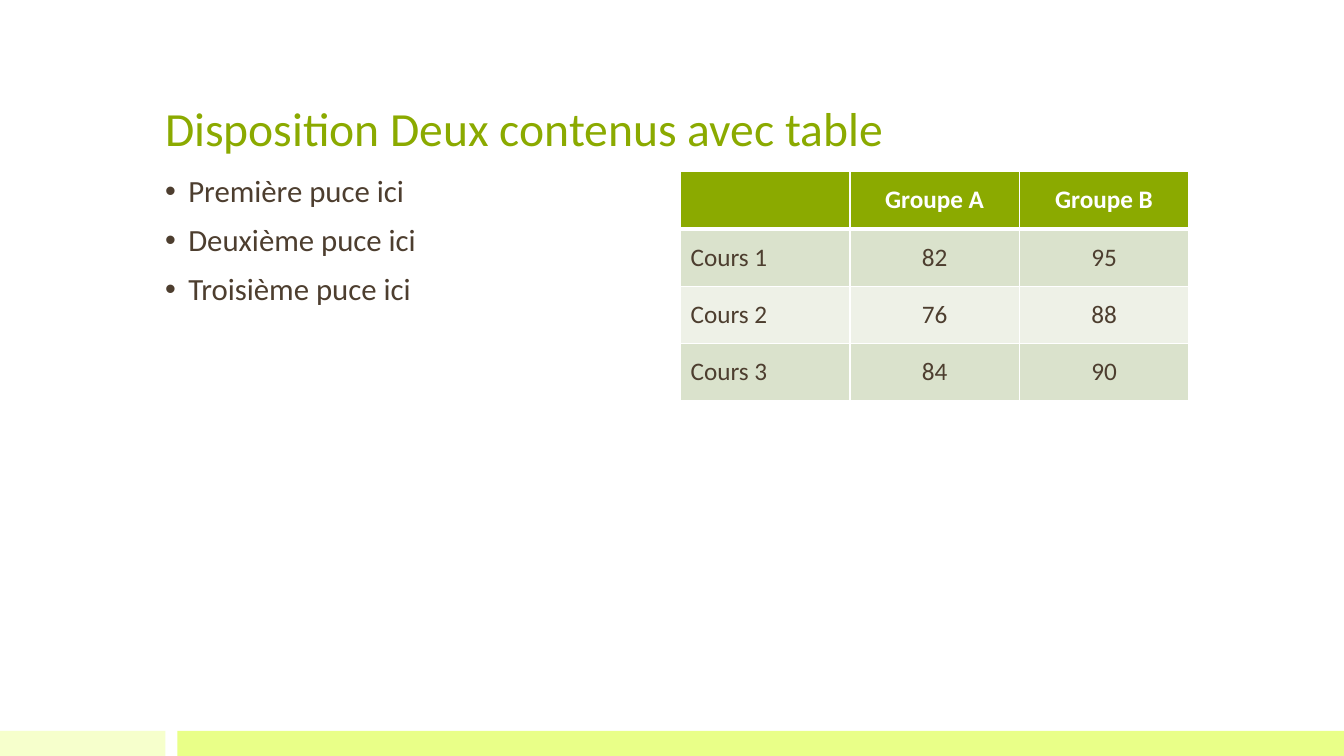
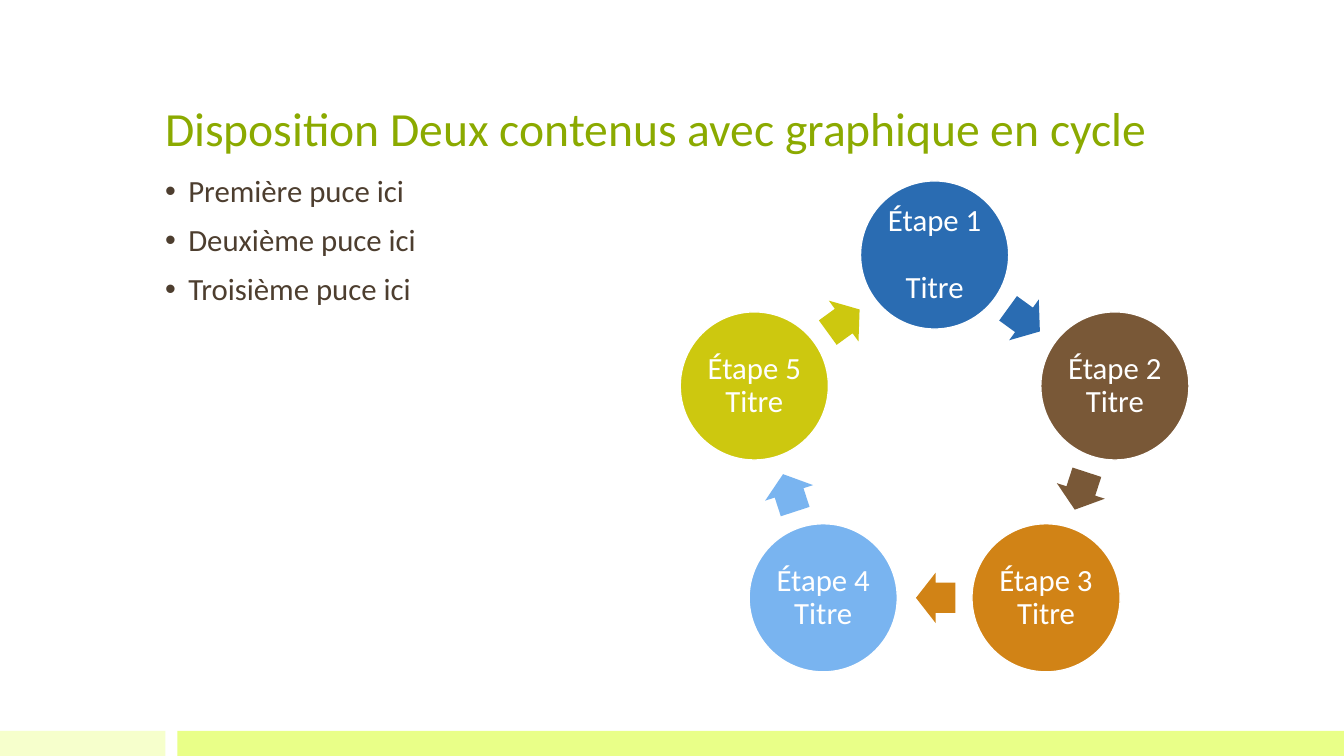
from copy import deepcopy
from math import cos, sin, radians

from lxml.etree import SubElement
from pptx import Presentation
from pptx.dml.color import RGBColor
from pptx.enum.shapes import MSO_SHAPE
from pptx.enum.text import MSO_ANCHOR, PP_ALIGN
from pptx.oxml.ns import qn
from pptx.util import Inches, Pt

# Shared style, in inches and points
COLORS = {
    "title": "8BAA00", "text": "4D3E2F", "white": "FFFFFF",
    "band_pale": "F6FFCC", "band": "E9FF88",
    "row_dark": "DAE2CC", "row_light": "EEF1E7",
    "blue": "2A6CB2", "brown": "795837", "orange": "D18316",
    "sky": "79B4F0", "olive": "CDC80F",
}
FONT = "Calibri"
WIDTH, HEIGHT = 13.33, 7.5
LEFT, TOP = 1.54, 1.7
COLUMN, GUTTER = 5.04, 0.17
RIGHT = LEFT + COLUMN + GUTTER
BULLETS = ["Première puce ici", "Deuxième puce ici", "Troisième puce ici"]


def style_text(text_frame, size, color, bold=False, align=None, spacing=None):
    for paragraph in text_frame.paragraphs:
        paragraph.alignment = align
        paragraph.line_spacing = spacing
        for run in paragraph.runs:
            run.font.name, run.font.size, run.font.bold = FONT, Pt(size), bold
            run.font.color.rgb = RGBColor.from_string(COLORS[color])
        for line_break in paragraph._p.findall(qn("a:br")):
            line_break.append(deepcopy(paragraph.runs[0].font._element))


def add_filled(slide, kind, left, top, width, height, color):
    shape = slide.shapes.add_shape(
        kind, Inches(left), Inches(top), Inches(width), Inches(height))
    shape.shadow.inherit = False
    shape.fill.solid()
    shape.fill.fore_color.rgb = RGBColor.from_string(COLORS[color])
    shape.line.fill.background()
    return shape


presentation = Presentation()
presentation.slide_width, presentation.slide_height = Inches(WIDTH), Inches(HEIGHT)

# Both slides: bands, title and bullets
slides = []
for title in ["Disposition Deux contenus avec table",
              "Disposition Deux contenus avec graphique en cycle"]:
    slide = presentation.slides.add_slide(presentation.slide_layouts[6])
    slides.append(slide)
    for left, right, color in [(0, 1.64, "band_pale"), (1.76, WIDTH, "band")]:
        add_filled(slide, MSO_SHAPE.RECTANGLE, left, HEIGHT - 0.25,
                   right - left, 0.25, color)

    title_box = slide.shapes.add_textbox(
        Inches(LEFT), Inches(0.3), Inches(2 * COLUMN + GUTTER), Inches(1.29))
    title_frame = title_box.text_frame
    title_frame.word_wrap = True
    title_frame.vertical_anchor = MSO_ANCHOR.BOTTOM
    title_frame.margin_bottom = Inches(0.03)
    title_frame.text = title
    style_text(title_frame, 34, "title", spacing=0.9)

    bullet_box = slide.shapes.add_textbox(
        Inches(LEFT), Inches(TOP), Inches(COLUMN), Inches(5.05))
    bullet_frame = bullet_box.text_frame
    bullet_frame.word_wrap = True
    bullet_frame.text = "\n".join(BULLETS)
    style_text(bullet_frame, 22, "text", spacing=0.9)
    for paragraph in bullet_frame.paragraphs:
        paragraph.space_before = Pt(11)
        properties = paragraph._p.get_or_add_pPr()
        properties.set("marL", str(Inches(0.23)))
        properties.set("indent", str(-Inches(0.23)))
        SubElement(properties, qn("a:buFont"), typeface="Arial")
        SubElement(properties, qn("a:buChar"), char="•")

table_slide, cycle_slide = slides

# Table of results
ROWS = [["", "Groupe A", "Groupe B"],
        ["Cours 1", "82", "95"],
        ["Cours 2", "76", "88"],
        ["Cours 3", "84", "90"]]
table = table_slide.shapes.add_table(
    len(ROWS), len(ROWS[0]), Inches(RIGHT), Inches(TOP),
    Inches(COLUMN), Inches(0.57 * len(ROWS))).table
for row, values in enumerate(ROWS):
    header = row == 0
    fill = "title" if header else "row_dark" if row % 2 else "row_light"
    for column, value in enumerate(values):
        cell = table.cell(row, column)
        cell.text = value
        cell.vertical_anchor = MSO_ANCHOR.MIDDLE
        style_text(cell.text_frame, 18, "white" if header else "text", bold=header,
                   align=PP_ALIGN.CENTER if column else PP_ALIGN.LEFT)
        properties = cell._tc.get_or_add_tcPr()
        for side in ["L", "R", "T", "B"]:
            thick = (row, side) in [(0, "B"), (1, "T")]
            border = SubElement(properties, qn("a:ln" + side),
                                w=str(Pt(3 if thick else 1)))
            solid = SubElement(border, qn("a:solidFill"))
            SubElement(solid, qn("a:srgbClr"), val=COLORS["white"])
        cell.fill.solid()
        cell.fill.fore_color.rgb = RGBColor.from_string(COLORS[fill])

# Cycle of five steps, clockwise from the top
STEPS = [("Étape 1 \vTitre", "blue"), ("Étape 2\vTitre", "brown"),
         ("Étape 3\vTitre", "orange"), ("Étape 4\vTitre", "sky"),
         ("Étape 5\vTitre", "olive")]
CENTER_X, CENTER_Y, RADIUS = RIGHT + COLUMN / 2, 4.41, 1.88
DIAMETER, ARROW_WIDTH, ARROW_HEIGHT = 1.47, 0.39, 0.5
ARROW_SETBACK = 0.01
turn = 360 / len(STEPS)
for index, (label, color) in enumerate(STEPS):
    angle = radians(index * turn)
    circle = add_filled(
        cycle_slide, MSO_SHAPE.OVAL,
        CENTER_X + RADIUS * sin(angle) - DIAMETER / 2,
        CENTER_Y - RADIUS * cos(angle) - DIAMETER / 2, DIAMETER, DIAMETER, color)
    circle.line.color.rgb = RGBColor.from_string(COLORS["white"])
    circle.line.width = Pt(1)
    frame = circle.text_frame
    frame.word_wrap = True
    frame.vertical_anchor = MSO_ANCHOR.MIDDLE
    frame.margin_left = frame.margin_right = Inches(0.03)
    frame.margin_top = frame.margin_bottom = Inches(0.03)
    frame.text = label
    style_text(frame, 22, "white", align=PP_ALIGN.CENTER, spacing=0.9)

    # Arrow halfway along the chord to the next circle
    heading = (index + 0.5) * turn
    angle = radians(heading)
    distance = RADIUS * cos(radians(turn / 2))
    middle_x = CENTER_X + distance * sin(angle) - ARROW_SETBACK * cos(angle)
    middle_y = CENTER_Y - distance * cos(angle) - ARROW_SETBACK * sin(angle)
    arrow = add_filled(
        cycle_slide, MSO_SHAPE.RIGHT_ARROW, middle_x - ARROW_WIDTH / 2,
        middle_y - ARROW_HEIGHT / 2, ARROW_WIDTH, ARROW_HEIGHT, color)
    arrow.adjustments[0], arrow.adjustments[1] = 0.6, 0.5
    arrow.rotation = heading

presentation.save("out.pptx")
